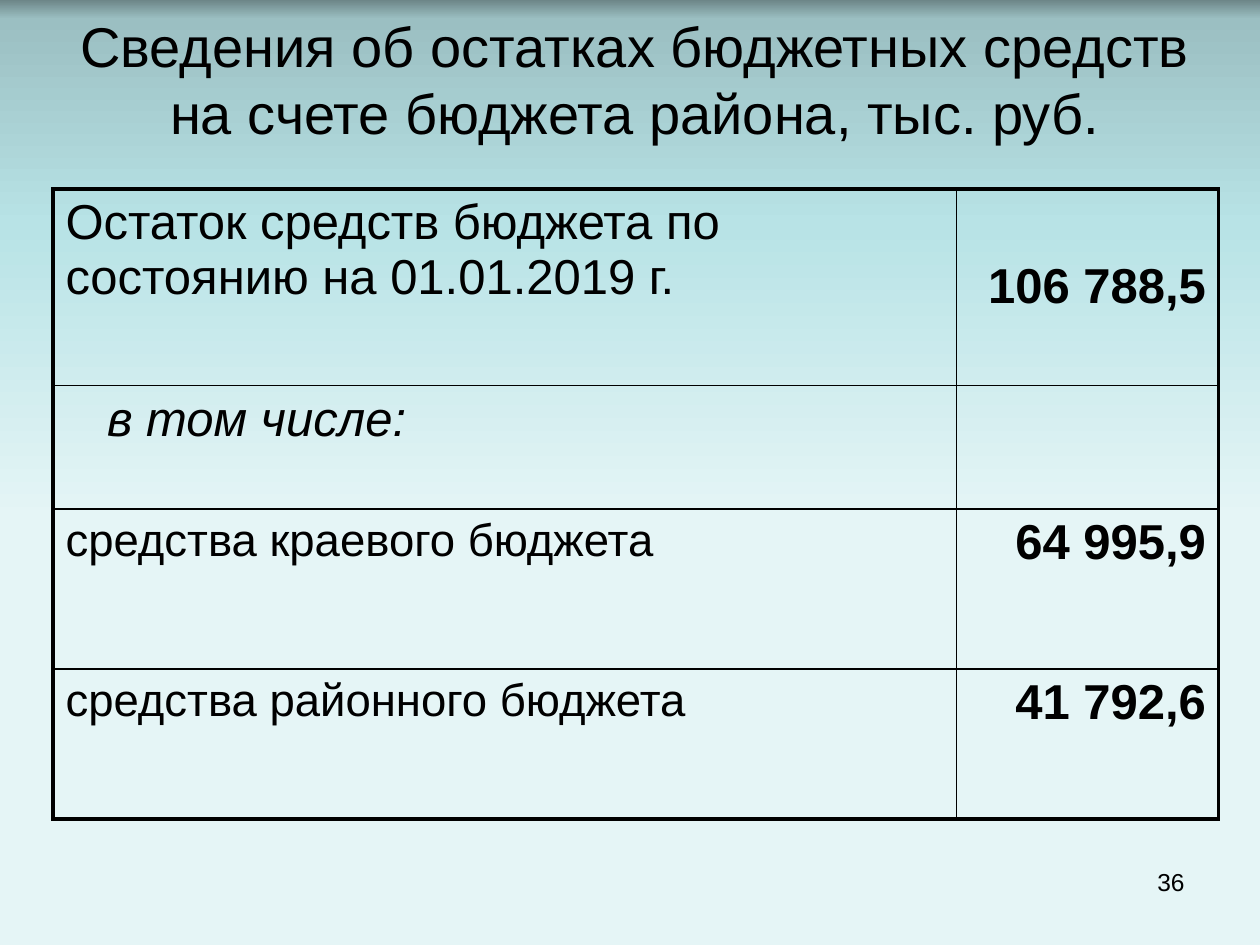
from dataclasses import dataclass

from lxml import etree
from pptx import Presentation
from pptx.dml.color import RGBColor
from pptx.enum.text import MSO_ANCHOR, MSO_AUTO_SIZE, PP_ALIGN
from pptx.oxml.ns import qn
from pptx.util import Inches, Pt

LEFT, CENTER, RIGHT = PP_ALIGN.LEFT, PP_ALIGN.CENTER, PP_ALIGN.RIGHT
MIDDLE = MSO_ANCHOR.MIDDLE
NO_AUTOFIT = MSO_AUTO_SIZE.NONE

FONT = "Arial"
BLACK = RGBColor(0x00, 0x00, 0x00)
BACKGROUND_STOPS = [
    (0, RGBColor(0x6D, 0x86, 0x88)),
    (2, RGBColor(0x9B, 0xBF, 0xC2)),
    (24, RGBColor(0xB8, 0xE3, 0xE6)),
    (55, RGBColor(0xE5, 0xF5, 0xF6)),
]
THIN, THICK = Pt(1), Pt(2.25)
COLUMN_WIDTHS = (7.17, 2.08)


@dataclass
class BalanceRow:
    label: str
    value: str
    height: float
    label_size: int = 28
    italic: bool = False
    indent: float = 0
    value_drop: float = 0


ROWS = [
    BalanceRow("Остаток средств бюджета по состоянию на 01.01.2019 г.",
               "106 788,5", 1.56, value_drop=0.51),
    BalanceRow("в том числе:", "", 0.98, italic=True, indent=0.33),
    BalanceRow("средства краевого бюджета", "64 995,9", 1.27, label_size=26),
    BalanceRow("средства районного бюджета", "41 792,6", 1.19, label_size=26),
]


def format_paragraph(p, size: float, align, bold: bool = False,
                     italic: bool = False) -> None:
    p.alignment = align
    p.font.name = FONT
    p.font.size = Pt(size)
    p.font.bold = bold
    p.font.italic = italic
    p.font.color.rgb = BLACK


def paint_background(s) -> None:
    fill = s.background.fill
    fill.gradient()
    fill.gradient_angle = 270
    stops = s.background._cSld.find(".//" + qn("a:gsLst"))
    for stop in list(stops):
        stops.remove(stop)
    for percent, color in BACKGROUND_STOPS:
        stop = etree.SubElement(stops, qn("a:gs"), pos=str(percent * 1000))
        etree.SubElement(stop, qn("a:srgbClr"), val=str(color))


def set_borders(cell, widths: dict) -> None:
    """Draw solid black borders; widths is keyed by L, R, T, B in that order."""
    tc_pr = cell._tc.get_or_add_tcPr()
    for position, (side, width) in enumerate(widths.items()):
        line = etree.Element(qn(f"a:ln{side}"), w=str(int(width)))
        fill = etree.SubElement(line, qn("a:solidFill"))
        etree.SubElement(fill, qn("a:srgbClr"), val=str(BLACK))
        tc_pr.insert(position, line)


def add_title(s, text: str) -> None:
    title = s.shapes.title
    title.left, title.top = Inches(0.25), Inches(0.25)
    title.width, title.height = Inches(9.58), Inches(0.75)
    tf = title.text_frame
    tf.text = text
    tf.word_wrap = True
    tf.auto_size = NO_AUTOFIT
    tf.vertical_anchor = MIDDLE
    format_paragraph(tf.paragraphs[0], 32, CENTER)


def add_balance_table(s, rows: list[BalanceRow]) -> None:
    frame = s.shapes.add_table(len(rows), len(COLUMN_WIDTHS), Inches(0.42),
                               Inches(1.5), Inches(9.25), Inches(5))
    table = frame.table
    table.first_row = table.horz_banding = False
    for column, width in zip(table.columns, COLUMN_WIDTHS):
        column.width = Inches(width)

    last = len(rows) - 1
    for i, row in enumerate(rows):
        table.rows[i].height = Inches(row.height)
        label, value = table.cell(i, 0), table.cell(i, 1)
        label.text, value.text = row.label, row.value
        label.margin_left = Inches(0.1 + row.indent)
        value.margin_top = Inches(0.05 + row.value_drop)
        format_paragraph(label.text_frame.paragraphs[0], row.label_size, LEFT,
                         italic=row.italic)
        format_paragraph(value.text_frame.paragraphs[0], 28, RIGHT, bold=True)
        for cell in (label, value):
            cell.fill.background()
            set_borders(cell, {
                "L": THICK if cell is label else THIN,
                "R": THICK if cell is value else THIN,
                "T": THICK if i == 0 else THIN,
                "B": THICK if i == last else THIN,
            })


def add_page_number(s, number: str) -> None:
    box = s.shapes.add_textbox(Inches(7.17), Inches(6.83), Inches(2.33), Inches(0.52))
    tf = box.text_frame
    tf.word_wrap = True
    tf.text = number
    format_paragraph(tf.paragraphs[0], 14, RIGHT)


def main() -> None:
    prs = Presentation()
    prs.slide_width, prs.slide_height = Inches(10), Inches(7.5)
    s = prs.slides.add_slide(prs.slide_layouts.get_by_name("Title Only"))
    paint_background(s)
    add_page_number(s, "36")
    add_title(s, "Сведения об остатках бюджетных средств на счете бюджета района, тыс. руб.")
    add_balance_table(s, ROWS)
    prs.save("out.pptx")


if __name__ == "__main__":
    main()
